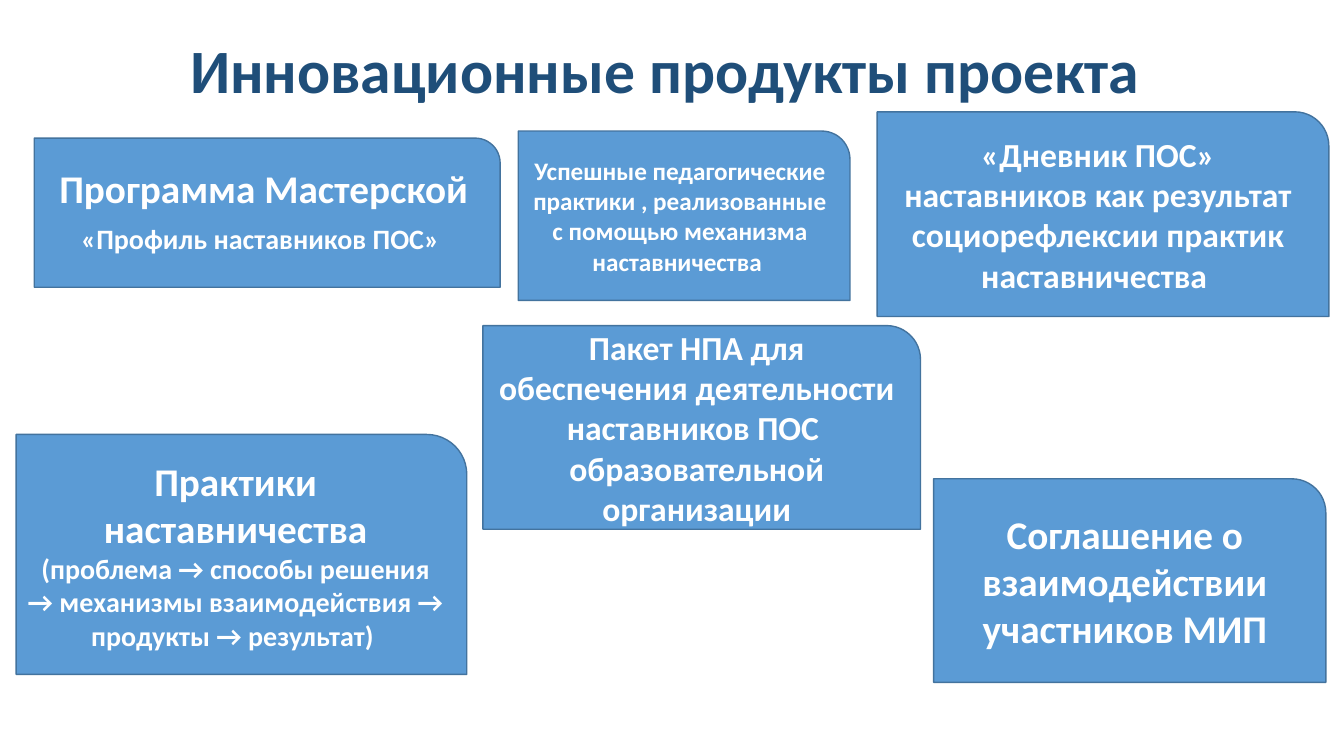
from pptx import Presentation
from pptx.dml.color import RGBColor
from pptx.enum.shapes import MSO_SHAPE
from pptx.enum.text import MSO_ANCHOR, MSO_AUTO_SIZE, PP_ALIGN
from pptx.util import Inches, Pt

CARD_SHAPE = MSO_SHAPE.ROUND_1_RECTANGLE
MIDDLE = MSO_ANCHOR.MIDDLE
CENTER = PP_ALIGN.CENTER
NO_FIT = MSO_AUTO_SIZE.NONE
TITLE_ONLY = 5
FONT = "Calibri"
COLORS = {"title": "1F4E79", "card": "5B9BD5", "border": "43739E", "text": "FFFFFF"}

CARDS = [
    ((4.79, 3.23, 4.34, 2.02), [
        ("Пакет НПА для обеспечения деятельности наставников ПОС ", 24),
        ("образовательной организации", 24),
    ], {}),
    ((0.34, 1.37, 4.62, 1.48), [
        ("Программа Мастерской", 28),
        ("«Профиль наставников ПОС» ", 20),
    ], {"line_spacing": 0.9, "space_before": Pt(10)}),
    ((0.16, 4.31, 4.47, 2.38), [
        ("Практики наставничества", 28),
        ("(проблема → способы решения → механизмы взаимодействия → продукты → результат) ", 20),
    ], {}),
    ((8.7, 1.11, 4.48, 2.03), [
        ("«Дневник ПОС» наставников как результат социорефлексии практик наставничества ", 24),
    ], {}),
    ((9.26, 4.75, 3.89, 2.02), [
        ("Соглашение о взаимодействии участников МИП", 28),
    ], {}),
    ((5.14, 1.3, 3.29, 1.68), [
        ("Успешные педагогические практики , реализованные с помощью механизма наставничества ", 18),
    ], {}),
]


def color(name):
    return RGBColor.from_string(COLORS[name])


def prepare_frame(shape):
    frame = shape.text_frame
    frame.word_wrap = True
    frame.auto_size = NO_FIT
    frame.vertical_anchor = MIDDLE
    return frame


def write_paragraph(para, text, size, color_name, line_spacing=None, space_before=None):
    para.text = text
    para.alignment = CENTER
    para.line_spacing = line_spacing
    para.space_before = space_before
    para.font.name = FONT
    para.font.size = Pt(size)
    para.font.bold = True
    para.font.color.rgb = color(color_name)


def set_title(page, text):
    title = page.shapes.title
    title.left, title.top = Inches(0.92), Inches(0)
    title.width, title.height = Inches(11.5), Inches(1.45)
    frame = prepare_frame(title)
    write_paragraph(frame.paragraphs[0], text, 44, "title", line_spacing=0.9)


def add_card(page, bounds, lines, spacing):
    card = page.shapes.add_shape(CARD_SHAPE, *map(Inches, bounds))
    card.shadow.inherit = False
    card.fill.solid()
    card.fill.fore_color.rgb = color("card")
    card.line.color.rgb = color("border")
    card.line.width = Pt(1)
    frame = prepare_frame(card)
    for index, (text, size) in enumerate(lines):
        para = frame.add_paragraph() if index else frame.paragraphs[0]
        write_paragraph(para, text, size, "text", **spacing)


def main():
    deck = Presentation()
    deck.slide_width, deck.slide_height = Inches(13.33), Inches(7.5)
    page = deck.slides.add_slide(deck.slide_layouts[TITLE_ONLY])
    set_title(page, "Инновационные продукты проекта ")
    for bounds, lines, spacing in CARDS:
        add_card(page, bounds, lines, spacing)
    deck.save("out.pptx")


if __name__ == "__main__":
    main()
